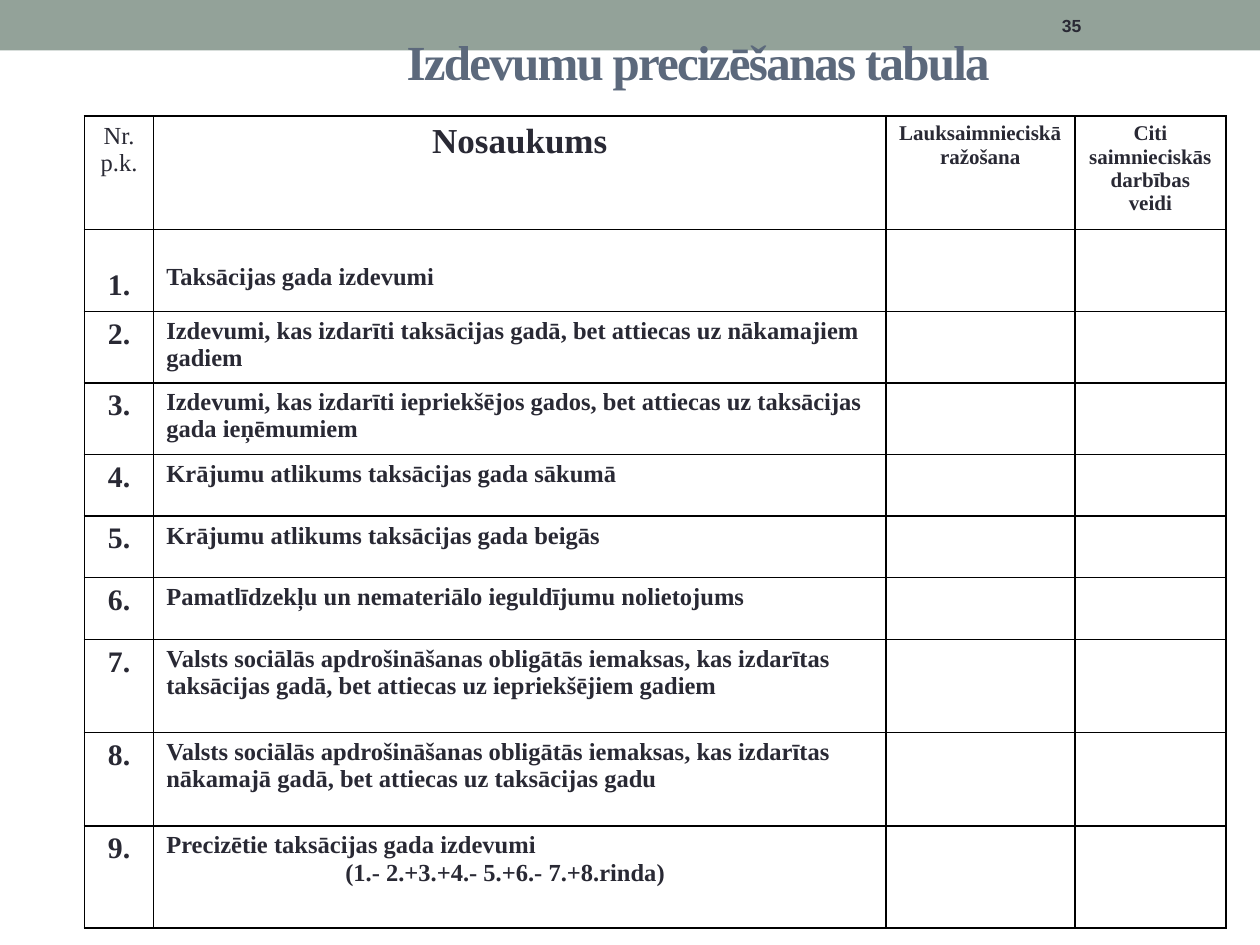
from lxml import etree
from pptx import Presentation
from pptx import util as u
from pptx.dml.color import RGBColor
from pptx.enum import shapes, text
from pptx.oxml.ns import qn

INK = "292934"
SERIF = "Times New Roman"
CENTER, LEFT = text.PP_ALIGN.CENTER, text.PP_ALIGN.LEFT


def rgb(value):
    return RGBColor.from_string(value)


def write(tf, lines, size, bold=True, align=LEFT, color=INK, font=SERIF):
    """Fill a text frame with one paragraph per line and return the last run."""
    tf.word_wrap = True
    for i, line in enumerate(lines):
        p = tf.paragraphs[0] if i == 0 else tf.add_paragraph()
        p.alignment = align
        r = p.add_run()
        r.text = line
        r.font.size, r.font.bold, r.font.name = u.Pt(size), bold, font
        r.font.color.rgb = rgb(color)
    return r


prs = Presentation()
prs.slide_width, prs.slide_height = u.Inches(10), u.Inches(7.5)
s = prs.slides.add_slide(prs.slide_layouts[6])

# Top band
band = s.shapes.add_shape(shapes.MSO_SHAPE.RECTANGLE, 0, 0, prs.slide_width, u.Inches(0.4))
band.shadow.inherit = False
band.fill.solid()
band.fill.fore_color.rgb = rgb("93A299")
band.line.fill.background()

# Title, centred a little right of the slide's middle
title = s.shapes.add_textbox(u.Inches(1), u.Inches(0.25), u.Inches(8.5), u.Inches(0.69))
tf = title.text_frame
tf.margin_left, tf.margin_right = u.Inches(0.68), u.Inches(0.1)
tf.margin_top = 0
r = write(tf, ["Izdevumu precizēšanas tabula"], 28, align=CENTER, color="5C697C")
r.font._element.set("spc", "-100")

# Page number
number = s.shapes.add_textbox(u.Inches(8.33), u.Inches(0.02), u.Inches(1.17), u.Inches(0.36))
number.text_frame.vertical_anchor = text.MSO_ANCHOR.MIDDLE
write(number.text_frame, ["35"], 10, font="Arial")

# Table
headers = [
    (["Nr.", "p.k."], 14, False),
    (["Nosaukums"], 20, True),
    (["Lauksaimnieciskā ražošana"], 12, True),
    (["Citi saimnieciskās darbības veidi"], 12, True),
]
items = [
    ["Taksācijas gada izdevumi"],
    ["Izdevumi, kas izdarīti taksācijas gadā, bet attiecas uz nākamajiem gadiem"],
    ["Izdevumi, kas izdarīti iepriekšējos gados, bet attiecas uz taksācijas gada ieņēmumiem"],
    ["Krājumu atlikums taksācijas gada sākumā"],
    ["Krājumu atlikums taksācijas gada beigās"],
    ["Pamatlīdzekļu un nemateriālo ieguldījumu nolietojums"],
    ["Valsts sociālās apdrošināšanas obligātās iemaksas, kas izdarītas taksācijas gadā, "
     "bet attiecas uz iepriekšējiem gadiem"],
    ["Valsts sociālās apdrošināšanas obligātās iemaksas, kas izdarītas nākamajā gadā, "
     "bet attiecas uz taksācijas gadu"],
    ["Precizētie taksācijas gada izdevumi", "(1.- 2.+3.+4.- 5.+6.- 7.+8.rinda)"],
]
col_widths = [0.55, 5.81, 1.5, 1.2]
row_heights = [0.88, 0.65, 0.56, 0.56, 0.49, 0.49, 0.49, 0.74, 0.74, 0.81]

table = s.shapes.add_table(
    len(row_heights), len(col_widths), u.Inches(0.67), u.Inches(0.92),
    u.Inches(sum(col_widths)), u.Inches(sum(row_heights))).table
table.first_row = table.horz_banding = False
for col, width in zip(table.columns, col_widths):
    col.width = u.Inches(width)
for row, height in zip(table.rows, row_heights):
    row.height = u.Inches(height)

for cell in table.iter_cells():
    tcPr = cell._tc.get_or_add_tcPr()
    for side in ("a:lnL", "a:lnR", "a:lnT", "a:lnB"):
        ln = etree.SubElement(tcPr, qn(side), w=str(u.Pt(1)))
        fill = etree.SubElement(ln, qn("a:solidFill"))
        etree.SubElement(fill, qn("a:srgbClr"), val="000000")
    cell.fill.background()

for i, (lines, size, bold) in enumerate(headers):
    write(table.cell(0, i).text_frame, lines, size, bold, CENTER)
for i, lines in enumerate(items, 1):
    write(table.cell(i, 0).text_frame, [f"{i}."], 17, align=CENTER)
    write(table.cell(i, 1).text_frame, lines, 14)

# The first item sits lower in its row; the formula line is indented
table.cell(1, 0).margin_top = u.Inches(0.31)
table.cell(1, 1).margin_top = u.Inches(0.27)
formula = table.cell(9, 1).text_frame.paragraphs[1]
formula._p.get_or_add_pPr().set("marL", str(u.Inches(1.42)))

prs.save("out.pptx")
